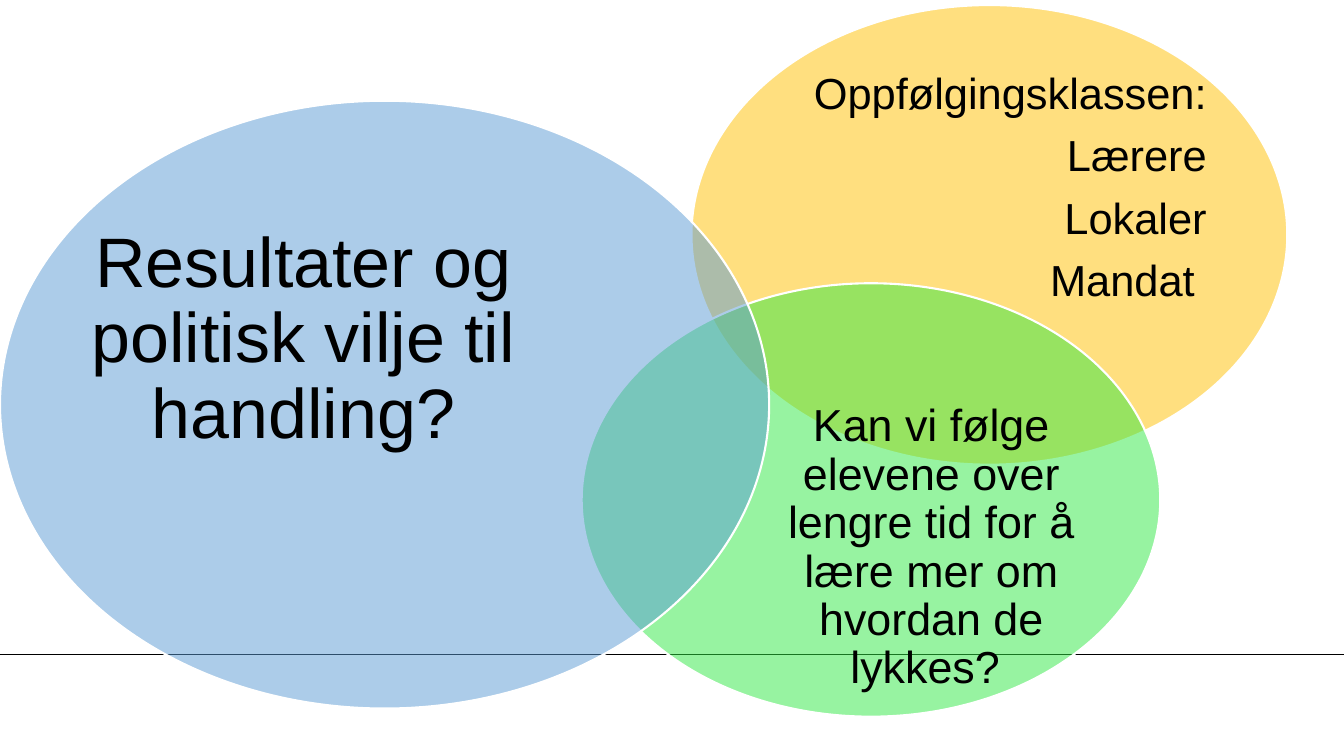
from dataclasses import dataclass

from lxml import etree
from pptx import Presentation, util as u
from pptx.dml.color import RGBColor
from pptx.enum import shapes, text
from pptx.oxml.ns import qn

SLIDE_WIDTH = u.Inches(13.333)
SLIDE_HEIGHT = u.Inches(7.5)


@dataclass(frozen=True)
class Theme:
    font: str = "Arial"
    ink: str = "000000"
    outline: str = "FFFFFF"
    follow_up: str = "FFC000"
    pupils: str = "30E845"
    politics: str = "5B9BD5"
    small: int = 31
    medium: int = 32
    large: int = 50
    line_spacing: float = 0.9
    paragraph_gap: float = 0.35
    opacity: int = 50


@dataclass(frozen=True)
class Area:
    """A rectangle in percent of the slide's width and height."""
    left: float
    top: float
    width: float
    height: float

    def emu(self) -> tuple[int, int, int, int]:
        return (int(SLIDE_WIDTH * self.left / 100), int(SLIDE_HEIGHT * self.top / 100),
                int(SLIDE_WIDTH * self.width / 100), int(SLIDE_HEIGHT * self.height / 100))


@dataclass(frozen=True)
class Topic:
    ellipse: Area
    label: Area
    color: str
    size: int
    align: text.PP_ALIGN
    wording: str


THEME = Theme()
BASELINE_RULE = 86.53  # percent of the slide's height

TOPICS = (
    Topic(Area(51.45, 0.67, 44.33, 60.8), Area(57.3, 11.33, 32.48, 27.33),
          THEME.follow_up, THEME.small, text.PP_ALIGN.RIGHT,
          "Oppfølgingsklassen:\nLærere\nLokaler\nMandat "),
    Topic(Area(43.28, 37.47, 43.05, 57.33), Area(56.4, 53.33, 25.8, 38.4),
          THEME.pupils, THEME.medium, text.PP_ALIGN.CENTER,
          "Kan vi følge elevene over lengre tid for å lære mer om hvordan de lykkes? "),
    Topic(Area(0, 13.33, 57.23, 80.4), Area(5.4, 30, 34.35, 30),
          THEME.politics, THEME.large, text.PP_ALIGN.CENTER,
          "Resultater og politisk vilje til handling?"),
)


def draw_rule(slide) -> None:
    y = int(SLIDE_HEIGHT * BASELINE_RULE / 100)
    rule = slide.shapes.add_connector(shapes.MSO_CONNECTOR.STRAIGHT, 0, y, SLIDE_WIDTH, y)
    rule.line.color.rgb = RGBColor.from_string(THEME.ink)
    rule.line.width = u.Pt(0.5)
    etree.SubElement(rule._element.spPr, qn("a:effectLst"))


def draw_ellipse(slide, topic: Topic) -> None:
    ellipse = slide.shapes.add_shape(shapes.MSO_SHAPE.OVAL, *topic.ellipse.emu())
    ellipse.shadow.inherit = False
    ellipse.fill.solid()
    ellipse.fill.fore_color.rgb = RGBColor.from_string(topic.color)
    fill_color = ellipse._element.spPr.find(qn("a:solidFill")).find(qn("a:srgbClr"))
    etree.SubElement(fill_color, qn("a:alpha"), val=str(THEME.opacity * 1000))
    ellipse.line.color.rgb = RGBColor.from_string(THEME.outline)
    ellipse.line.width = u.Pt(1.5)


def draw_label(slide, topic: Topic) -> None:
    frame = slide.shapes.add_textbox(*topic.label.emu()).text_frame
    frame.word_wrap = True
    frame.vertical_anchor = text.MSO_ANCHOR.MIDDLE
    frame.margin_left = frame.margin_top = frame.margin_right = frame.margin_bottom = 0
    frame.text = topic.wording
    for paragraph in frame.paragraphs:
        paragraph.alignment = topic.align
        paragraph.line_spacing = THEME.line_spacing
        paragraph.space_after = u.Pt(topic.size * THEME.paragraph_gap)
        for run in paragraph.runs:
            run.font.name = THEME.font
            run.font.size = u.Pt(topic.size)
            run.font.color.rgb = RGBColor.from_string(THEME.ink)


def main() -> None:
    deck = Presentation()
    deck.slide_width, deck.slide_height = SLIDE_WIDTH, SLIDE_HEIGHT
    slide = deck.slides.add_slide(deck.slide_layouts[6])
    draw_rule(slide)
    for topic in TOPICS:
        draw_ellipse(slide, topic)
        draw_label(slide, topic)
    deck.save("out.pptx")


if __name__ == "__main__":
    main()
